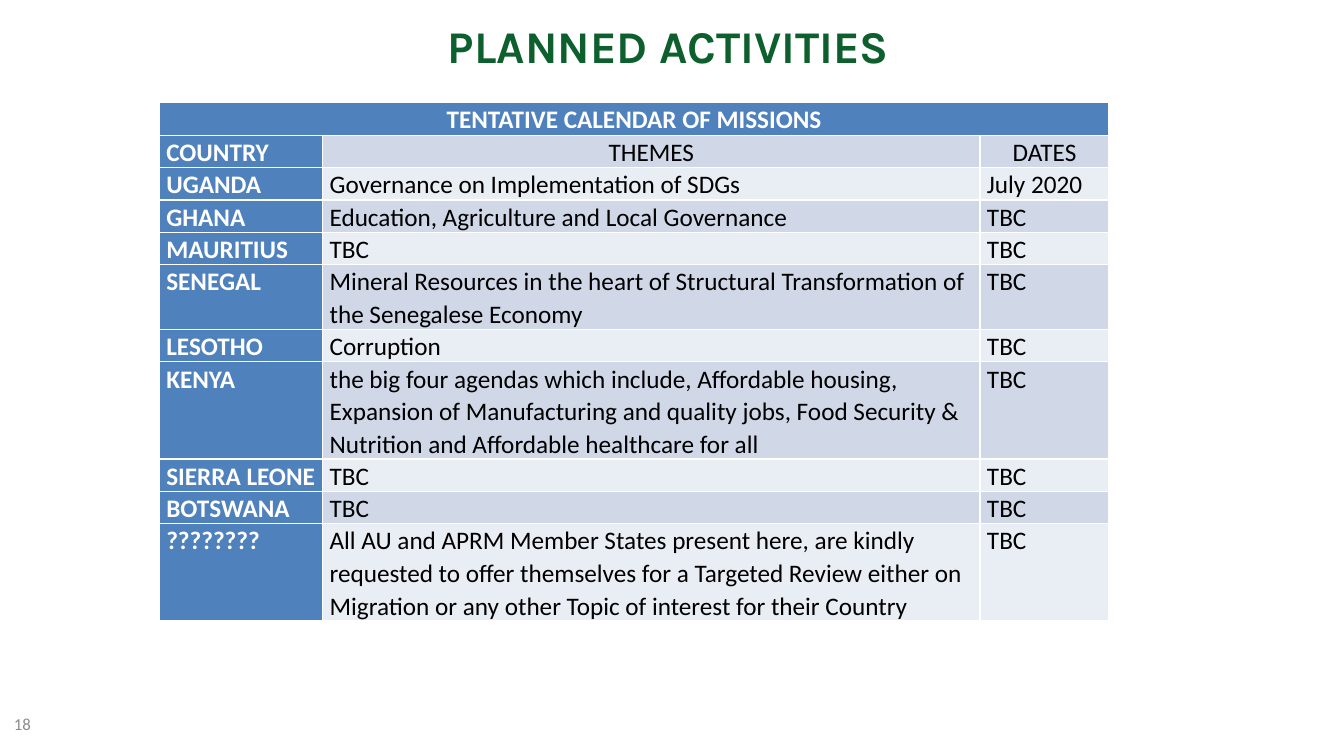
import pptx
import pptx.util
import pptx.dml.color
import pptx.enum.text

TITLE = "PLANNED ACTIVITIES"
NUMBER = "18"
ROWS = [
    ("TENTATIVE CALENDAR OF MISSIONS", "", ""),
    ("COUNTRY", "THEMES", "DATES"),
    ("UGANDA", "Governance on Implementation of SDGs", "July 2020"),
    ("GHANA", "Education, Agriculture and Local Governance", "TBC"),
    ("MAURITIUS", "TBC", "TBC"),
    ("SENEGAL", "Mineral Resources in the heart of Structural Transformation of "
     "the Senegalese Economy", "TBC"),
    ("LESOTHO", "Corruption", "TBC"),
    ("KENYA", "the big four agendas which include, Affordable housing, "
     "Expansion of Manufacturing and quality jobs, Food Security & "
     "Nutrition and Affordable healthcare for all", "TBC"),
    ("SIERRA LEONE", "TBC", "TBC"),
    ("BOTSWANA", "TBC", "TBC"),
    ("????????", "All AU and APRM Member States present here, are kindly "
     "requested to offer themselves for a Targeted Review either on "
     "Migration or any other Topic of interest for their Country", "TBC"),
]
WIDTHS = [1.62, 6.52, 1.28]
LINE = 0.29
TALL = {"SENEGAL": 0.6, "KENYA": 0.9, "????????": 0.9}
COLORS = {"green": "0D602D", "gray": "8C8C8C", "blue": "4F81BD", "dark": "D0D8E8",
          "light": "E9EDF4", "white": "FFFFFF", "black": "000000"}

Inches = pptx.util.Inches
CENTER = pptx.enum.text.PP_ALIGN.CENTER
LEFT = pptx.enum.text.PP_ALIGN.LEFT
MIDDLE = pptx.enum.text.MSO_ANCHOR.MIDDLE


def color(name):
    return pptx.dml.color.RGBColor.from_string(COLORS[name])


def write(frame, text, size, face, shade, bold=False, align=LEFT):
    frame.text = text
    frame.word_wrap = True
    para = frame.paragraphs[0]
    para.alignment = align
    para.font.size = pptx.util.Pt(size)
    para.font.name = face
    para.font.bold = bold
    para.font.color.rgb = color(shade)
    return para


def add_title(slide):
    title = slide.shapes.title
    title.left, title.top = Inches(2.1), Inches(0.08)
    title.width, title.height = Inches(9.06), Inches(0.75)
    frame = title.text_frame
    write(frame, TITLE, 32.4, "Karla", "green", True, CENTER)
    frame.auto_size = pptx.enum.text.MSO_AUTO_SIZE.NONE
    frame.vertical_anchor = MIDDLE


def add_number(slide):
    box = slide.shapes.add_textbox(Inches(0.04), Inches(6.98), Inches(3.11), Inches(0.4))
    write(box.text_frame, NUMBER, 12, "Calibri", "gray")
    box.text_frame.vertical_anchor = MIDDLE


def add_missions(slide):
    highs = [TALL.get(row[0], LINE) for row in ROWS]
    table = slide.shapes.add_table(
        len(ROWS), len(WIDTHS), Inches(1.58), Inches(1.02),
        Inches(sum(WIDTHS)), Inches(sum(highs))).table
    table.first_col = True
    for column, width in zip(table.columns, WIDTHS):
        column.width = Inches(width)
    for r, row in enumerate(ROWS):
        table.rows[r].height = Inches(highs[r])
        for c, text in enumerate(row):
            cell = table.cell(r, c)
            head = r == 0 or c == 0
            align = CENTER if r == 0 or (r == 1 and c > 0) else LEFT
            para = write(cell.text_frame, text, 18, "Calibri",
                         "white" if head else "black", head, align)
            para.line_spacing = 1.07
            cell.margin_left = cell.margin_right = Inches(0.07)
            cell.margin_top = cell.margin_bottom = 0
            cell.fill.solid()
            cell.fill.fore_color.rgb = color("blue" if head else "dark" if r % 2 else "light")
    table.cell(0, 0).merge(table.cell(0, len(WIDTHS) - 1))


def main():
    deck = pptx.Presentation()
    deck.slide_width, deck.slide_height = Inches(13.33), Inches(7.5)
    slide = deck.slides.add_slide(deck.slide_layouts[5])
    add_title(slide)
    add_number(slide)
    add_missions(slide)
    deck.save("out.pptx")


if __name__ == "__main__":
    main()
